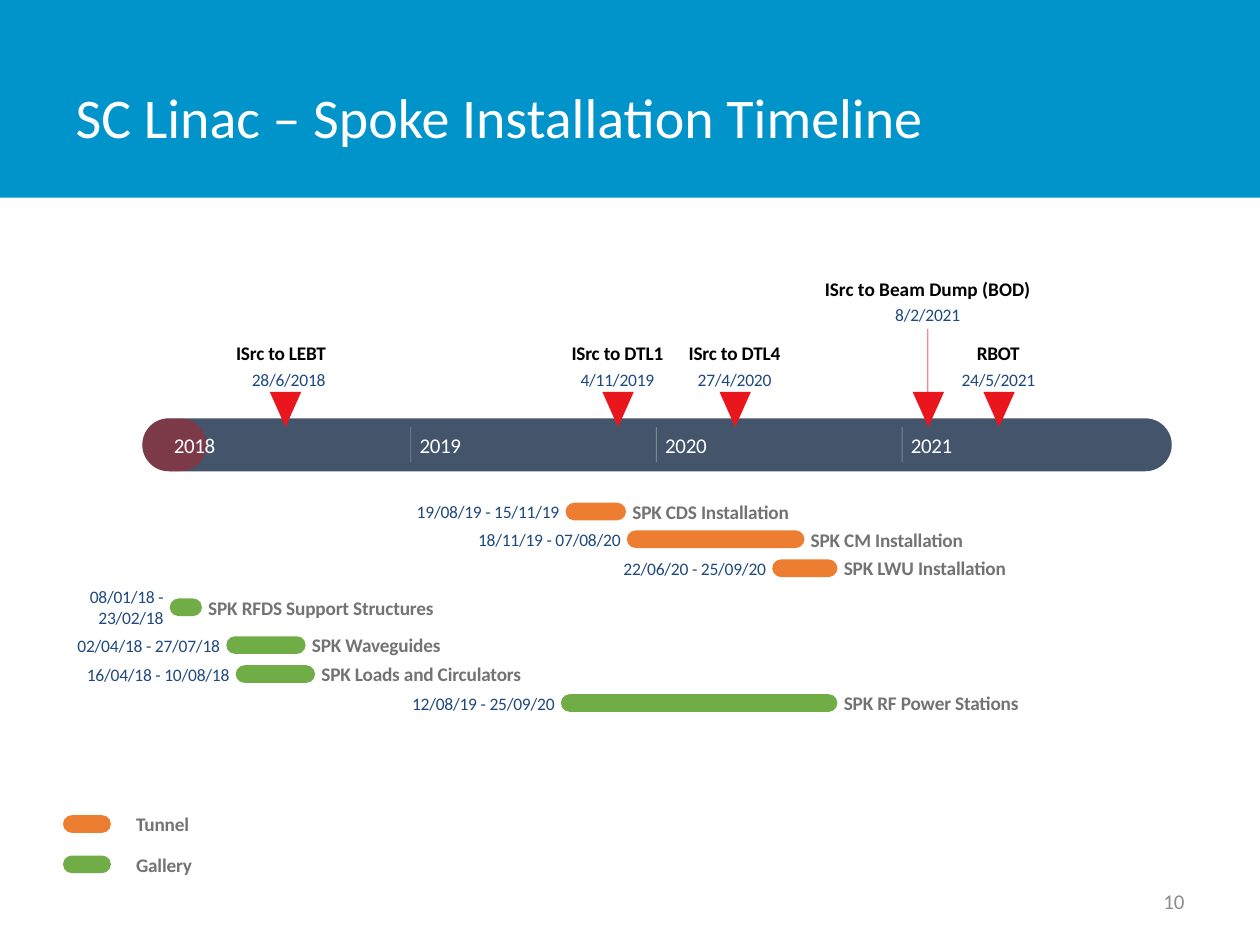
from lxml import etree
from pptx import Presentation
from pptx.dml.color import RGBColor
from pptx.enum.shapes import MSO_CONNECTOR, MSO_SHAPE
from pptx.enum.text import MSO_ANCHOR, PP_ALIGN
from pptx.oxml.ns import qn
from pptx.util import Inches, Pt

LEFT, CENTER, RIGHT = PP_ALIGN.LEFT, PP_ALIGN.CENTER, PP_ALIGN.RIGHT
MIDDLE = MSO_ANCHOR.MIDDLE
RECTANGLE, ROUNDED = MSO_SHAPE.RECTANGLE, MSO_SHAPE.ROUNDED_RECTANGLE
TRIANGLE = MSO_SHAPE.ISOSCELES_TRIANGLE
STRAIGHT = MSO_CONNECTOR.STRAIGHT

FONT = "Calibri"
HEADER_BLUE = RGBColor(0x00, 0x94, 0xCA)
WHITE = RGBColor(0xFF, 0xFF, 0xFF)
BLACK = RGBColor(0, 0, 0)
SLATE = RGBColor(0x44, 0x54, 0x6A)
PURE_RED = RGBColor(0xFF, 0, 0)
MARKER_RED = RGBColor(0xEA, 0x16, 0x1E)
NAVY = RGBColor(0x1F, 0x49, 0x7E)
GRAY = RGBColor(0x73, 0x73, 0x73)
NUMBER_GRAY = RGBColor(0x8C, 0x8C, 0x8C)
ORANGE = RGBColor(0xED, 0x7D, 0x31)
GREEN = RGBColor(0x70, 0xAD, 0x47)

TITLE = "SC Linac – Spoke Installation Timeline"
PAGE_NUMBER = "10"
# label, label width, label shift, date, date width, date shift, label top, spacing
MILESTONES = [
    ("ISrc to LEBT", 0.76, -0.03, "28/6/2018", 0.61, 0.03, 2.7, -0.1),
    ("ISrc to DTL1", 0.75, 0, "4/11/2019", 0.61, 0, 2.7, -0.1),
    ("ISrc to DTL4", 0.75, 0, "27/4/2020", 0.61, 0, 2.7, -0.1),
    ("ISrc to Beam Dump (BOD)", 1.64, 0, "8/2/2021", 0.54, 0, 2.19, 0),
    ("RBOT", 0.36, 0, "24/5/2021", 0.61, 0, 2.7, -0.2),
]
TASKS = [
    ("SPK CDS Installation", 1.28, "19/08/19 - 15/11/19", 1.17, 4.06, ORANGE),
    ("SPK CM Installation", 1.24, "18/11/19 - 07/08/20", 1.17, 4.28, ORANGE),
    ("SPK LWU Installation", 1.32, "22/06/20 - 25/09/20", 1.17, 4.51, ORANGE),
    ("SPK RFDS Support Structures", 1.83, "08/01/18 - 23/02/18", 0.64, 4.82, GREEN),
    ("SPK Waveguides", 1.04, "02/04/18 - 27/07/18", 1.17, 5.12, GREEN),
    ("SPK Loads and Circulators", 1.62, "16/04/18 - 10/08/18", 1.17, 5.35, GREEN),
    ("SPK RF Power Stations", 1.42, "12/08/19 - 25/09/20", 1.17, 5.58, GREEN),
]
LEGEND = [("Tunnel", 6.54, ORANGE), ("Gallery", 6.86, GREEN)]
YEARS = [2018, 2019, 2020, 2021]

MONTH_DAYS = [31, 28, 31, 30, 31, 30, 31, 31, 30, 31, 30, 31]
BASE_YEAR, BASE_X, YEAR_WIDTH = 2019, 3.26, 1.95
BAR_HEIGHT, GAP = 0.14, 0.05


def date_x(date):
    day, month, year = (int(part) for part in date.split("/"))
    elapsed = sum(MONTH_DAYS[:month - 1]) + day - 1
    return BASE_X + (year % 100 - BASE_YEAR % 100 + elapsed / 365) * YEAR_WIDTH


def set_alpha(element, percent):
    color = next(element.iter(qn("a:srgbClr")))
    etree.SubElement(color, qn("a:alpha")).set("val", str(percent * 1000))


def add_block(slide, kind, left, top, width, height, color):
    shape = slide.shapes.add_shape(
        kind, Inches(left), Inches(top), Inches(width), Inches(height))
    shape.shadow.inherit = False
    shape.fill.solid()
    shape.fill.fore_color.rgb = color
    shape.line.fill.background()
    if kind == ROUNDED:
        shape.adjustments[0] = 0.5
    return shape


def add_line(slide, x, top, bottom, color, width, alpha):
    line = slide.shapes.add_connector(
        STRAIGHT, Inches(x), Inches(top), Inches(x), Inches(bottom))
    line.line.color.rgb = color
    line.line.width = Pt(width)
    properties = line.element.spPr
    set_alpha(properties, alpha)
    etree.SubElement(properties, qn("a:effectLst"))


def write(frame, text, size, color, align=LEFT, bold=False, spacing=0):
    frame.vertical_anchor = MIDDLE
    paragraph = frame.paragraphs[0]
    paragraph.alignment = align
    run = paragraph.add_run()
    run.text = text
    run.font.name, run.font.size, run.font.bold = FONT, Pt(size), bold
    run.font.color.rgb = color
    if spacing:
        run.font._element.set("spc", str(round(spacing * 100)))


def add_text(slide, left, middle, width, height, text, size, color,
             align=LEFT, bold=False, spacing=-0.1, wrap=True):
    box = slide.shapes.add_textbox(
        Inches(left), Inches(middle - height / 2), Inches(width), Inches(height))
    frame = box.text_frame
    frame.word_wrap = wrap
    frame.margin_left = frame.margin_right = 0
    frame.margin_top = frame.margin_bottom = 0
    write(frame, text, size, color, align, bold, spacing)


def add_header(slide):
    band = add_block(slide, RECTANGLE, 0, 0, 10, 1.57, HEADER_BLUE)
    title = slide.shapes.title
    title.element.addprevious(band.element)
    title.left, title.top = Inches(0.5), Inches(0.3)
    title.width, title.height = Inches(7.81), Inches(1.25)
    write(title.text_frame, TITLE, 32, WHITE)
    number = slide.shapes.add_textbox(
        Inches(7.17), Inches(6.95), Inches(2.33), Inches(0.4))
    number.text_frame.word_wrap = True
    write(number.text_frame, PAGE_NUMBER, 12, NUMBER_GRAY, RIGHT)


def add_axis(slide):
    add_block(slide, ROUNDED, 1.13, 3.32, 8.17, 0.42, SLATE)
    elapsed = add_block(slide, ROUNDED, 1.13, 3.32, 0.51, 0.42, PURE_RED)
    set_alpha(elapsed.element.spPr, 30)
    for year in YEARS:
        x = BASE_X + (year - BASE_YEAR) * YEAR_WIDTH
        if year > YEARS[0]:
            add_line(slide, x, 3.39, 3.67, WHITE, 0.5, 30)
        add_text(slide, x + 0.07, 3.53, 0.33, 0.2, str(year), 12, WHITE,
                 spacing=-0.2, wrap=False)


def add_milestones(slide):
    for label, width, shift, date, date_width, date_shift, top, spacing in MILESTONES:
        x = date_x(date)
        if top < 2.7:
            add_line(slide, x, top + 0.42, 3.25, MARKER_RED, 0.75, 50)
        add_text(slide, x + shift - width / 2, top + 0.1, width, 0.19, label,
                 11, BLACK, CENTER, True, spacing)
        add_text(slide, x + date_shift - date_width / 2, top + 0.31, date_width,
                 0.17, date, 10, NAVY, CENTER)
        marker = add_block(slide, TRIANGLE, x - 0.12, 3.11, 0.25, 0.28, MARKER_RED)
        marker.element.spPr.xfrm.set("flipV", "1")


def add_tasks(slide):
    for label, width, dates, date_width, middle, color in TASKS:
        start, end = (date_x(date) for date in dates.split(" - "))
        end += 0.01
        add_block(slide, ROUNDED, start, middle - BAR_HEIGHT / 2, end - start,
                  BAR_HEIGHT, color)
        date_height = 0.17 if date_width > 1 else 0.34
        add_text(slide, start - GAP - date_width, middle, date_width, date_height,
                 dates, 10, NAVY, RIGHT)
        add_text(slide, end + GAP, middle, width, 0.19, label, 11, GRAY, bold=True)


def add_legend(slide):
    for label, middle, color in LEGEND:
        add_block(slide, ROUNDED, 0.5, middle - BAR_HEIGHT / 2, 0.38, BAR_HEIGHT, color)
        add_text(slide, 1.08, middle, 0.88, 0.19, label, 11, GRAY, bold=True)


def main():
    presentation = Presentation()
    presentation.slide_width, presentation.slide_height = Inches(10), Inches(7.5)
    slide = presentation.slides.add_slide(presentation.slide_layouts[5])
    add_header(slide)
    add_axis(slide)
    add_milestones(slide)
    add_tasks(slide)
    add_legend(slide)
    presentation.save("out.pptx")


if __name__ == "__main__":
    main()
